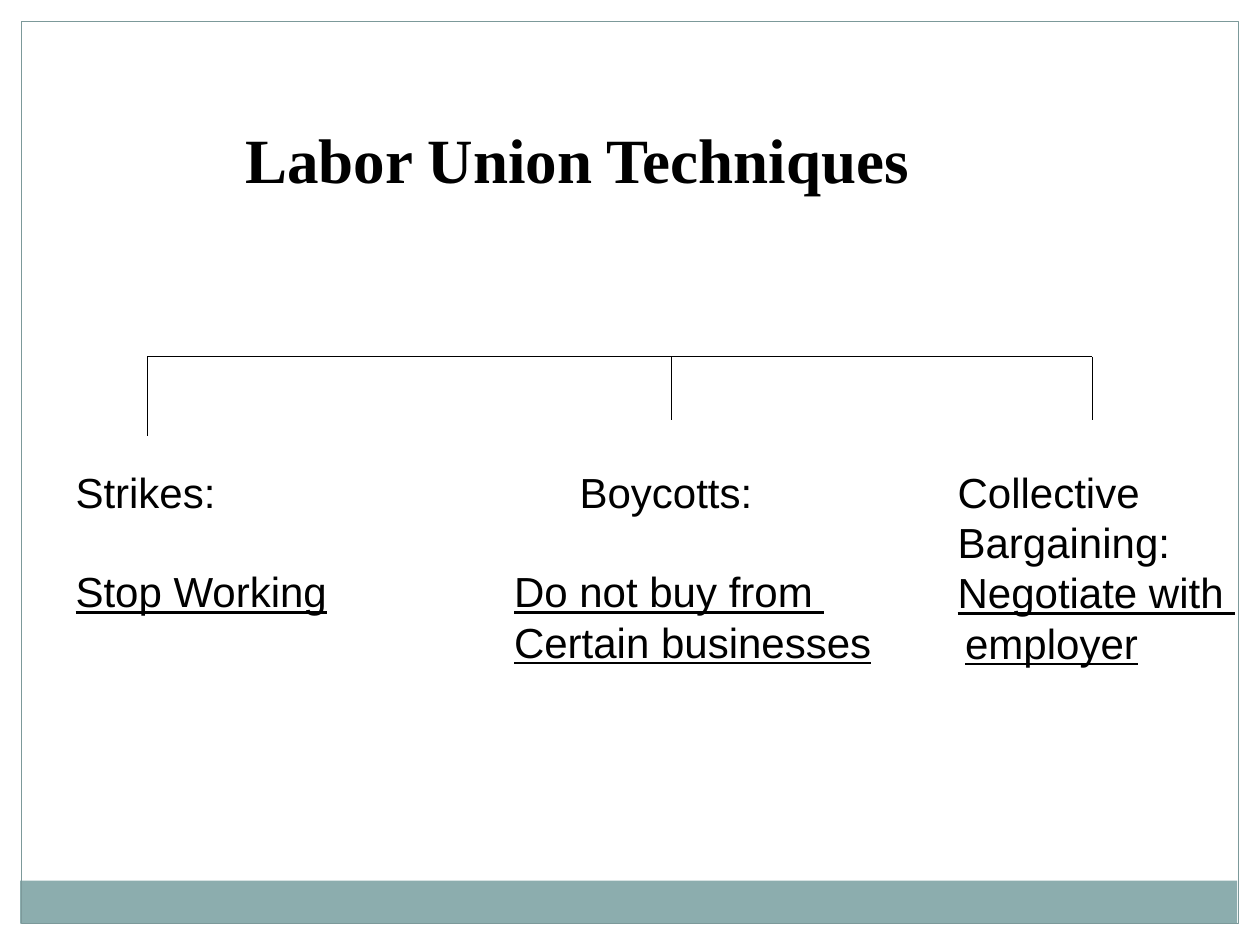
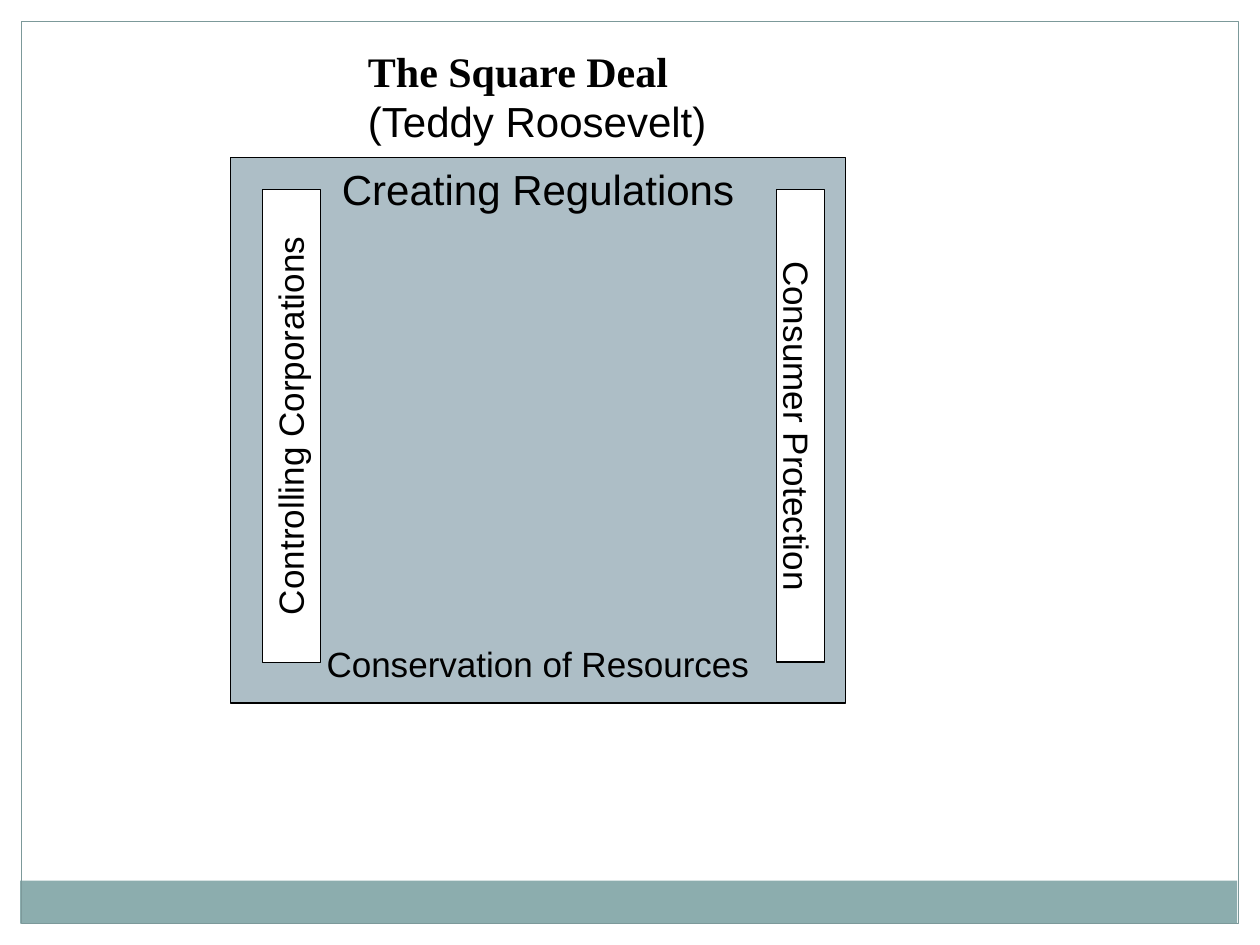
import pptx
import pptx.util
import pptx.dml.color
import pptx.enum.shapes
import pptx.enum.text
import pptx.oxml.ns
import lxml.etree

Inches = pptx.util.Inches
Pt = pptx.util.Pt
Align = pptx.enum.text.PP_ALIGN
Anchor = pptx.enum.text.MSO_ANCHOR

COLORS = {
    "text": "000000",
    "line": "000000",
    "panel": "FFFFFF",
    "square": "ADBEC6",
    "band": "8CADAE",
    "frame": "7C999A",
}
BODY_FONT = "Arial"
TITLE_FONT = "Times New Roman"


def color(name):
    return pptx.dml.color.RGBColor.from_string(COLORS[name])


class SlideBuilder:
    def __init__(self):
        self.deck = pptx.Presentation()
        self.deck.slide_width = Inches(10)
        self.deck.slide_height = Inches(7.5)
        self.page = None

    def new_page(self):
        self.page = self.deck.slides.add_slide(self.deck.slide_layouts[6])
        self.rectangle(0.16, 6.99, 9.66, 0.34, fill="band")
        self.rectangle(0.17, 0.17, 9.66, 7.16, line="frame")

    def rectangle(self, left, top, width, height, fill=None, line=None, rotation=0):
        box = self.page.shapes.add_shape(
            pptx.enum.shapes.MSO_SHAPE.RECTANGLE,
            Inches(left), Inches(top), Inches(width), Inches(height))
        box.shadow.inherit = False
        box.rotation = rotation
        if fill:
            box.fill.solid()
            box.fill.fore_color.rgb = color(fill)
        else:
            box.fill.background()
        if line:
            box.line.color.rgb = color(line)
            box.line.width = Pt(0.75)
        else:
            box.line.fill.background()
        box.text_frame.vertical_anchor = Anchor.TOP
        return box

    def text_box(self, left, top, width, height):
        box = self.page.shapes.add_textbox(
            Inches(left), Inches(top), Inches(width), Inches(height))
        frame = box.text_frame
        frame.word_wrap = False
        frame.margin_left = frame.margin_right = 0
        frame.margin_top = frame.margin_bottom = 0
        frame.vertical_anchor = Anchor.TOP
        return box

    def paragraph(self, box, text, size=24, font=BODY_FONT, bold=False,
                  underline=False, align=Align.LEFT, before=0, indent=0):
        frame = box.text_frame
        para = frame.paragraphs[0]
        if para.runs:
            para = frame.add_paragraph()
        if indent:
            para._p.get_or_add_pPr().set("marL", str(Inches(indent)))
        para.alignment = align
        if before:
            para.space_before = Pt(before)
        span = para.add_run()
        span.text = text
        span.font.name = font
        span.font.size = Pt(size)
        span.font.bold = bold
        span.font.underline = underline
        span.font.color.rgb = color("text")

    def title(self, box, text, size, align=Align.LEFT):
        self.paragraph(box, text, size, TITLE_FONT, bold=True, align=align)

    def connector(self, start_x, start_y, end_x, end_y):
        line = self.page.shapes.add_connector(
            pptx.enum.shapes.MSO_CONNECTOR.STRAIGHT,
            Inches(start_x), Inches(start_y), Inches(end_x), Inches(end_y))
        line.line.color.rgb = color("line")
        line.line.width = Pt(0.75)
        lxml.etree.SubElement(
            line._element.spPr, pptx.oxml.ns.qn("a:effectLst"))


def build_techniques(slide):
    slide.new_page()
    branch_top = 2.83
    slide.connector(1.17, branch_top, 8.67, branch_top)
    for x, bottom in ((1.17, 3.46), (5.33, 3.33), (8.67, 3.33)):
        slide.connector(x, branch_top, x, bottom)

    heading = slide.text_box(1.12, 0.96, 6.92, 0.6)
    slide.title(heading, "Labor Union Techniques", 36, Align.CENTER)

    skipped_line = 28.2
    columns = (
        (0.6, 2.1, (("Strikes:", False, 0, 0),
                    ("Stop Working", True, skipped_line, 0))),
        (4.08, 2.9, (("Boycotts:", False, 0, 0.52),
                     ("Do not buy from ", True, skipped_line, 0),
                     ("Certain businesses", True, 0, 0))),
        (7.6, 2.25, (("Collective", False, 0, 0),
                     ("Bargaining:", False, 0, 0),
                     ("Negotiate with ", True, 0, 0),
                     ("employer", True, 0, 0.06))),
    )
    for left, width, lines in columns:
        column = slide.text_box(left, 3.7, width, 1.6)
        for text, underline, before, indent in lines:
            slide.paragraph(column, text, underline=underline,
                            before=before, indent=indent)


def build_square_deal(slide):
    slide.new_page()
    square = slide.rectangle(1.83, 1.25, 4.88, 4.33, "square", "line")
    slide.paragraph(square, "Creating Regulations", align=Align.CENTER)
    slide.paragraph(square, "Conservation of Resources", 20,
                    align=Align.CENTER, before=245)

    sides = (
        ("Controlling Corporations", 0.44, 3.15, 0.46, 270),
        ("Consumer Protection", 4.48, 3.19, 0.38, 90),
    )
    for text, left, top, height, rotation in sides:
        side = slide.rectangle(left, top, 3.75, height, "panel", "line", rotation)
        slide.paragraph(side, text, 20, align=Align.CENTER)

    heading = slide.text_box(2.92, 0.36, 2.72, 0.8)
    slide.title(heading, "The Square Deal", 24)
    slide.paragraph(heading, "(Teddy Roosevelt)")


def main():
    slide = SlideBuilder()
    build_techniques(slide)
    build_square_deal(slide)
    slide.deck.save("out.pptx")


if __name__ == "__main__":
    main()
